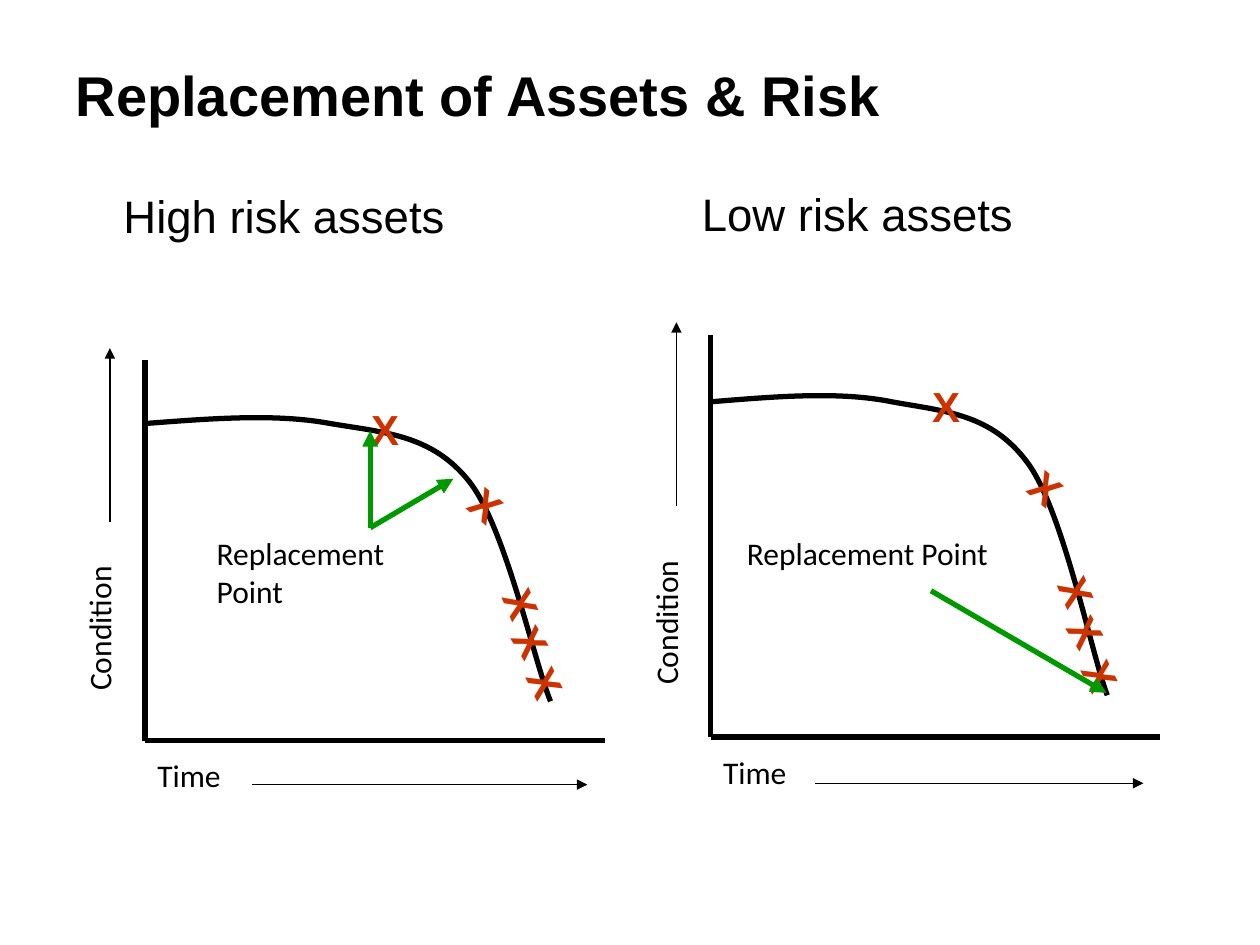
from dataclasses import dataclass

from lxml.etree import SubElement as Sub
from pptx import Presentation
from pptx.dml.color import RGBColor as Color
from pptx.enum.shapes import MSO_CONNECTOR as Link
from pptx.enum.text import MSO_ANCHOR as Anchor, MSO_AUTO_SIZE as Fit
from pptx.enum.text import PP_ALIGN as Align
from pptx.oxml.ns import qn
from pptx.util import Inches, Pt

Spot = tuple[float, float]


@dataclass(frozen=True)
class Theme:
    black: str = "000000"
    red: str = "CC3300"
    green: str = "009900"
    head: str = "Arial"
    body: str = "Calibri"
    title: int = 32
    sub: int = 26
    mark: int = 24
    label: int = 18
    thick: float = 3
    thin: float = 0.75


@dataclass(frozen=True)
class Mark:
    """A replacement choice: centre in percent of the plot, and its turn."""
    x: float
    y: float
    turn: float = 0


@dataclass(frozen=True)
class Plot:
    """Frames in inches; the note and arrows in percent of the plot."""
    text: str
    head: tuple[float, float, float, float]
    left: float
    upper: float
    wide: float
    high: float
    steep: Spot
    note: tuple[float, float, float, float]
    arrows: tuple[tuple[Spot, Spot], ...]

    def at(self, spot: Spot) -> Spot:
        return (self.left + self.wide * spot[0] / 100,
                self.upper + self.high * spot[1] / 100)


look = Theme()

# Decay curve: a start, then three Bezier pieces of three points each
START = (0, 16.6)
BENDS = (
    (14.2, 15.3), (28.5, 13.9), (40.3, 16.6),
    (52.1, 19), (62.4, 19.5), (70.5, 31.8),
    (78.4, 43.8), (84.8, 79.9), (88.2, 89.6),
)
MARKS = (
    Mark(55.5, 19.2), Mark(76.2, 41.5, 40.2), Mark(88, 89, 63.9),
    Mark(82.5, 68.3, 66.7), Mark(85.2, 78, 58.5),
)
PLOTS = (
    Plot("High risk assets", (0.5, 1.44, 3.34, 1),
         1.15, 2.86, 3.65, 3.02, (0.67, 0.57), (12.9, 44, 48.2, 26.8),
         (((49, 44), (67.1, 31.1)), ((49, 44), (49, 18.5)))),
    Plot("Low risk assets", (5.09, 1.43, 4.42, 0.79),
         5.64, 2.66, 3.57, 3.19, (0.7, 0.55), (5.3, 48, 61.9, 26.6),
         (((49, 63.6), (88, 89)),)),
)


def write(frame, text: str, font: str, size: int, hue: str,
          bold: bool = False) -> None:
    para = frame.paragraphs[0]
    para.alignment = Align.LEFT
    run = para.add_run()
    run.text = text
    run.font.name, run.font.size, run.font.bold = font, Pt(size), bold
    run.font.color.rgb = Color.from_string(hue)


def label(slide, text: str, x: float, y: float, w: float, h: float,
          font: str = look.body, size: int = look.label,
          hue: str = look.black, bold: bool = False, turn: float = 0):
    box = slide.shapes.add_textbox(*map(Inches, (x, y, w, h)))
    box.rotation = turn
    box.text_frame.word_wrap = True
    box.text_frame.auto_size = Fit.SHAPE_TO_FIT_TEXT
    write(box.text_frame, text, font, size, hue, bold)
    return box


def line(slide, plot: Plot, start: Spot, end: Spot, hue: str = look.black,
         width: float = look.thick, arrow: bool = False) -> None:
    ends = map(Inches, plot.at(start) + plot.at(end))
    link = slide.shapes.add_connector(Link.STRAIGHT, *ends)
    link.line.color.rgb = Color.from_string(hue)
    link.line.width = Pt(width)
    if arrow:
        Sub(link.line._get_or_add_ln(), qn("a:tailEnd"), type="triangle")
    Sub(link._element.spPr, qn("a:effectLst"))


def curve(slide, plot: Plot) -> None:
    first, *rest = [tuple(map(Inches, plot.at(spot)))
                    for spot in (START, *BENDS)]
    pen = slide.shapes.build_freeform(*first)
    pen.add_line_segments(rest, close=False)
    shape = pen.convert_to_shape()
    # Join each three straight steps into one Bezier piece
    track = next(shape._element.iter(qn("a:path")))
    steps = track.findall(qn("a:lnTo"))
    for n in range(0, len(steps), 3):
        piece = Sub(track, qn("a:cubicBezTo"))
        for step in steps[n:n + 3]:
            piece.append(step[0])
            track.remove(step)
    shape.shadow.inherit = False
    shape.fill.background()
    shape.line.color.rgb = Color.from_string(look.black)
    shape.line.width = Pt(look.thick)


def draw(slide, plot: Plot) -> None:
    # Heading
    head = label(slide, plot.text, *plot.head, look.head, look.sub)
    head.text_frame.auto_size = Fit.NONE
    head.text_frame.margin_left = Inches(0.48)

    # Axes and curve
    line(slide, plot, (0, 0), (0, 100))
    line(slide, plot, (0, 100), (100, 100))
    curve(slide, plot)

    # Crosses along the curve
    for mark in MARKS:
        x, y = plot.at((mark.x, mark.y))
        w, h = (plot.steep if mark.turn > 45
                else (plot.wide * 0.18, plot.high * 0.19))
        label(slide, "X", x - w / 2, y - h / 2, w, h, look.head, look.mark,
              look.red, True, mark.turn)

    # Axis names with their thin arrows
    label(slide, "Time", *plot.at((0, 102.4)), plot.wide * 0.59, 0.46)
    x, y = plot.at((-9.3, 53.6))
    w, h = plot.high * 0.73, 0.45
    label(slide, "Condition", x - w / 2, y - h / 2, w, h, turn=270)
    line(slide, plot, (23.2, 111.5), (96.2, 111.5), width=look.thin,
         arrow=True)
    line(slide, plot, (-7.6, 42.5), (-7.6, -3.2), width=look.thin, arrow=True)

    # Replacement note and its pointers
    x, y, w, h = plot.note
    label(slide, "Replacement Point", *plot.at((x, y)),
          plot.wide * w / 100, plot.high * h / 100)
    for start, end in plot.arrows:
        line(slide, plot, start, end, look.green, arrow=True)


def main() -> None:
    deck = Presentation()
    deck.slide_width, deck.slide_height = Inches(10), Inches(7.5)
    slide = deck.slides.add_slide(deck.slide_layouts[5])

    # Title
    title = slide.shapes.title
    title.left, title.top = Inches(0.5), Inches(0.12)
    title.width, title.height = Inches(9), Inches(1.25)
    title.text_frame.vertical_anchor = Anchor.MIDDLE
    write(title.text_frame, "Replacement of Assets & Risk", look.head,
          look.title, look.black, True)

    for plot in PLOTS:
        draw(slide, plot)
    deck.save("out.pptx")


if __name__ == "__main__":
    main()
